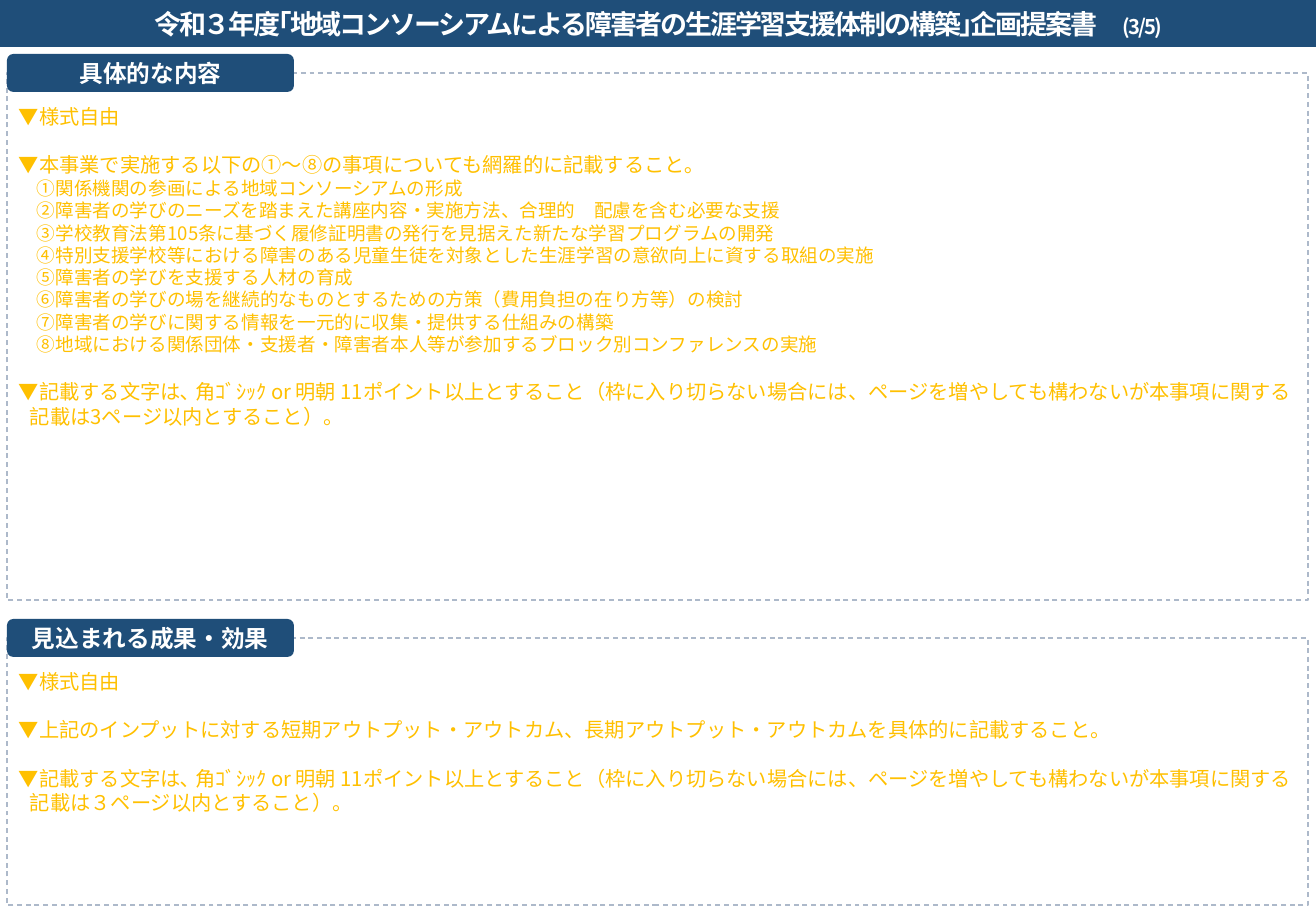
import lxml.etree
import pptx
import pptx.dml.color
import pptx.enum.dml
import pptx.enum.shapes
import pptx.enum.text
import pptx.oxml.ns
import pptx.util

PX = 7526  # EMU per px
FONT = "Noto Sans CJK JP"
COLORS = {"navy": "1F4E79", "frame": "ADB9CA", "guide": "FFC000", "white": "FFFFFF"}

SLIDE_SIZE = (1316, 911)
FRAME_LEFT, FRAME_WIDTH = 7, 1301
HEADING_SIZE = (287, 38)
HEADING_RISE = 19

# Guidance paragraph formats: text size, indents in px, spacing in points
GUIDE = {"size": 12, "left": 0, "first": 0, "line": 14.5, "before": 14.2}
FIRST = {**GUIDE, "before": 0}
ITEM = {**GUIDE, "size": 11, "left": 18, "line": 13.2, "before": 0}
HANGING = {**GUIDE, "left": 11, "first": -11}

FONT_RULE = ("▼記載する文字は､ 角ｺﾞｼｯｸ or 明朝 11ポイント以上とすること（枠に入り切らない場合には、"
             "ページを増やしても構わないが本事項に関する記載は{}ページ以内とすること）。")

ITEMS = [
    "①関係機関の参画による地域コンソーシアムの形成",
    "②障害者の学びのニーズを踏まえた講座内容・実施方法、合理的　配慮を含む必要な支援",
    "③学校教育法第105条に基づく履修証明書の発行を見据えた新たな学習プログラムの開発",
    "④特別支援学校等における障害のある児童生徒を対象とした生涯学習の意欲向上に資する取組の実施",
    "⑤障害者の学びを支援する人材の育成",
    "⑥障害者の学びの場を継続的なものとするための方策（費用負担の在り方等）の検討",
    "⑦障害者の学びに関する情報を一元的に収集・提供する仕組みの構築",
    "⑧地域における関係団体・支援者・障害者本人等が参加するブロック別コンファレンスの実施",
]

SECTIONS = [
    {"heading": "具体的な内容", "top": 73, "height": 527, "guidance": [
        ("▼様式自由", FIRST),
        ("▼本事業で実施する以下の①～⑧の事項についても網羅的に記載すること｡", GUIDE),
        *[(item, ITEM) for item in ITEMS],
        (FONT_RULE.format("3"), HANGING),
    ]},
    {"heading": "見込まれる成果・効果", "top": 638, "height": 267, "guidance": [
        ("▼様式自由", FIRST),
        ("▼上記のインプットに対する短期アウトプット・アウトカム、"
         "長期アウトプット・アウトカムを具体的に記載すること。", GUIDE),
        (FONT_RULE.format("３"), HANGING),
    ]},
]


def rgb(color):
    return pptx.dml.color.RGBColor.from_string(COLORS[color])


def place(shape, left, top, width, height):
    box = {"left": left, "top": top, "width": width, "height": height}
    for side, length in box.items():
        setattr(shape, side, length * PX)


def format_frame(frame, anchor, top_inset=6):
    settings = {
        "word_wrap": True,
        "auto_size": pptx.enum.text.MSO_AUTO_SIZE.NONE,
        "vertical_anchor": anchor,
        "margin_left": 12 * PX, "margin_right": 12 * PX,
        "margin_top": top_inset * PX, "margin_bottom": 6 * PX,
    }
    for name, value in settings.items():
        setattr(frame, name, value)


def add_run(paragraph, text, size, color, bold=False, spacing=0):
    run = paragraph.add_run()
    run.text = text
    settings = {"name": FONT, "size": pptx.util.Pt(size), "bold": bold}
    for name, value in settings.items():
        setattr(run.font, name, value)
    run.font.color.rgb = rgb(color)
    properties = run._r.get_or_add_rPr()
    if spacing:
        properties.set("spc", str(spacing))
    east_asian = lxml.etree.SubElement(properties, pptx.oxml.ns.qn("a:ea"))
    east_asian.set("typeface", FONT)


def fill_navy(shape):
    shape.fill.solid()
    shape.fill.fore_color.rgb = rgb("navy")
    shape.line.fill.background()


def write_title(title):
    place(title, 0, 0, SLIDE_SIZE[0], 47)
    fill_navy(title)
    format_frame(title.text_frame, pptx.enum.text.MSO_ANCHOR.MIDDLE)
    line = title.text_frame.paragraphs[0]
    line.alignment = pptx.enum.text.PP_ALIGN.CENTER
    for text, size in [
        ("令和３年度｢地域コンソーシアムによる障害者の生涯学習支援体制の構築｣企画提案書　", 16),
        ("(3/5)", 12),
    ]:
        add_run(line, text, size, "white", bold=True, spacing=-120)


def write_guidance(body, section):
    """Turn a body placeholder into a dashed frame with guidance text."""
    place(body, FRAME_LEFT, section["top"], FRAME_WIDTH, section["height"])
    body.fill.background()
    body.line.color.rgb = rgb("frame")
    body.line.width = pptx.util.Pt(0.75)
    body.line.dash_style = pptx.enum.dml.MSO_LINE.DASH
    frame = body.text_frame
    format_frame(frame, pptx.enum.text.MSO_ANCHOR.TOP, top_inset=31)
    for number, (text, style) in enumerate(section["guidance"]):
        paragraph = frame.add_paragraph() if number else frame.paragraphs[0]
        properties = paragraph._p.get_or_add_pPr()
        properties.set("marL", str(style["left"] * PX))
        properties.set("indent", str(style["first"] * PX))
        lxml.etree.SubElement(properties, pptx.oxml.ns.qn("a:buNone"))
        spacing = {"line_spacing": style["line"], "space_before": style["before"],
                   "space_after": 0}
        for name, points in spacing.items():
            setattr(paragraph, name, pptx.util.Pt(points))
        add_run(paragraph, text, style["size"], "guide")


def add_heading(slide, section):
    heading = slide.shapes.add_shape(pptx.enum.shapes.MSO_SHAPE.ROUNDED_RECTANGLE, 0, 0, 0, 0)
    place(heading, FRAME_LEFT, section["top"] - HEADING_RISE, *HEADING_SIZE)
    heading.shadow.inherit = False
    fill_navy(heading)
    format_frame(heading.text_frame, pptx.enum.text.MSO_ANCHOR.MIDDLE)
    line = heading.text_frame.paragraphs[0]
    line.alignment = pptx.enum.text.PP_ALIGN.CENTER
    add_run(line, section["heading"], 14, "white", bold=True)


def main():
    deck = pptx.Presentation()
    deck.slide_width, deck.slide_height = (length * PX for length in SLIDE_SIZE)
    slide = deck.slides.add_slide(deck.slide_layouts.get_by_name("Two Content"))
    write_title(slide.shapes.title)
    for index, section in enumerate(SECTIONS, start=1):
        write_guidance(slide.placeholders[index], section)
        add_heading(slide, section)
    deck.save("out.pptx")


if __name__ == "__main__":
    main()
